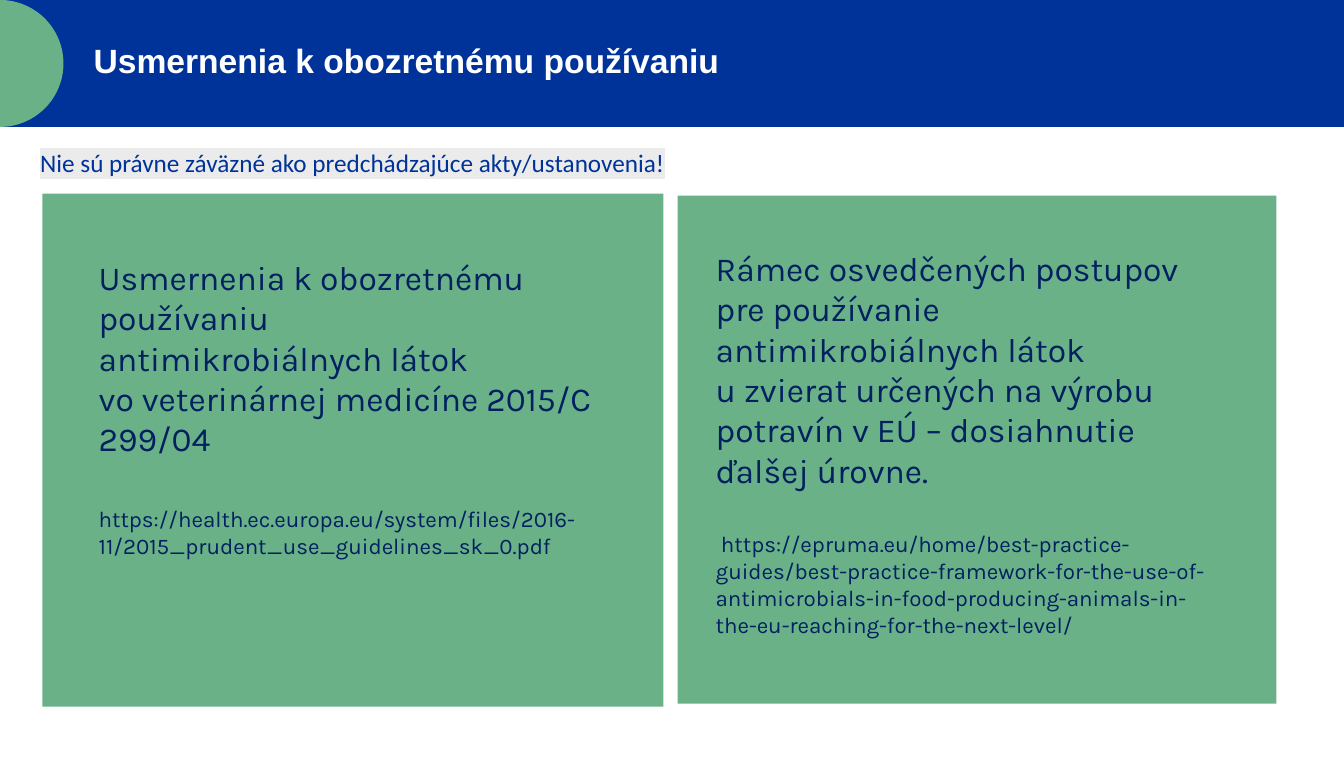
from math import cos, pi, sin

from lxml import etree
from pptx import Presentation
from pptx.dml.color import RGBColor
from pptx.enum.shapes import MSO_SHAPE
from pptx.enum.text import MSO_ANCHOR
from pptx.oxml.ns import qn
from pptx.util import Inches, Pt

RECT = MSO_SHAPE.RECTANGLE
MIDDLE = MSO_ANCHOR.MIDDLE
BLUE = RGBColor(0x00, 0x33, 0x99)
GREEN = RGBColor(0x6B, 0xB1, 0x88)
NAVY = RGBColor(0x00, 0x20, 0x60)
WHITE = RGBColor(0xFF, 0xFF, 0xFF)
GREY = RGBColor(0xEC, 0xEB, 0xEB)
NBSP = chr(160)


def paint(shape, color):
    """Give a shape a flat fill without line or shadow."""
    shape.shadow.inherit = False
    shape.fill.solid()
    shape.fill.fore_color.rgb = color
    shape.line.fill.background()


def add_box(slide, box, color):
    """Add a plain filled rectangle."""
    paint(slide.shapes.add_shape(RECT, *map(Inches, box)), color)


def style(para, size, name, color, bold=False):
    """Set the font of a paragraph."""
    font = para.font
    font.size = Pt(size)
    font.name = name
    font.color.rgb = color
    font.bold = bold


def add_text(slide, box, text):
    """Add a wrapping text box and return its frame."""
    frame = slide.shapes.add_textbox(*map(Inches, box)).text_frame
    frame.word_wrap = True
    frame.text = text
    return frame


def add_header(slide, left, top, width, height):
    """Draw the title band with its half disc."""
    add_box(slide, (left, top, width, height), BLUE)
    radius = height / 2
    turns = [pi * step / 60 for step in range(61)]
    arc = [(Inches(left + radius * sin(turn)),
            Inches(top + radius * (1 - cos(turn)))) for turn in turns]
    path = slide.shapes.build_freeform(*arc[0])
    path.add_line_segments(arc[1:])
    paint(path.convert_to_shape(), GREEN)
    frame = add_text(slide, (left + 0.83, top + 0.34, 10.58, 0.52),
                     f"Usmernenia k{NBSP}obozretnému používaniu")
    frame.vertical_anchor = MIDDLE
    style(frame.paragraphs[0], 24, "Arial", WHITE, True)


def add_note(slide, left, top, width, height):
    """Place the highlighted remark under the band."""
    frame = add_text(slide, (left, top, width, height),
                     "Nie sú právne záväzné ako predchádzajúce akty/ustanovenia!")
    para = frame.paragraphs[0]
    style(para, 18, "Calibri", BLUE)
    props = para.runs[0]._r.get_or_add_rPr()
    mark = etree.SubElement(props, qn("a:highlight"))
    etree.SubElement(mark, qn("a:srgbClr"), val=str(GREY))


def add_card(slide, box, inset, title, link, gap):
    """Draw a green card with a title and a link inside."""
    add_box(slide, box, GREEN)
    left, top = box[:2]
    dx, dy, width, height = inset
    frame = add_text(slide, (left + dx, top + dy, width, height), title)
    style(frame.paragraphs[0], 24, "Karla", NAVY)
    para = frame.add_paragraph()
    para.text = link
    para.space_before = Pt(gap)
    style(para, 16, "Karla", NAVY)


def main():
    """Build the slide and save it."""
    deck = Presentation()
    deck.slide_width, deck.slide_height = Inches(13.33), Inches(7.51)
    slide = deck.slides.add_slide(deck.slide_layouts[6])
    add_header(slide, 0, 0, 13.33, 1.26)
    add_card(slide, (0.42, 1.92, 6.16, 5.09), (0.46, 0.58, 5.42, 3),
             f"Usmernenia k{NBSP}obozretnému používaniu\v"
             f"antimikrobiálnych látok vo{NBSP}veterinárnej medicíne 2015/C 299/04",
             "https://health.ec.europa.eu/system/files/2016-11/"
             "2015_prudent_use_guidelines_sk_0.pdf", 33.6)
    add_card(slide, (6.72, 1.94, 5.94, 5.04), (0.28, 0.47, 5.08, 3.2),
             "Rámec osvedčených postupov pre používanie antimikrobiálnych látok "
             f"u{NBSP}zvierat určených na výrobu potravín v{NBSP}EÚ – "
             "dosiahnutie ďalšej úrovne.",
             f"{NBSP}https://epruma.eu/home/best-practice-guides/"
             "best-practice-framework-for-the-use-of-antimicrobials-in-"
             "food-producing-animals-in-the-eu-reaching-for-the-next-level/", 28.8)
    add_note(slide, 0.3, 1.41, 7.62, 0.4)
    deck.save("out.pptx")


if __name__ == "__main__":
    main()
